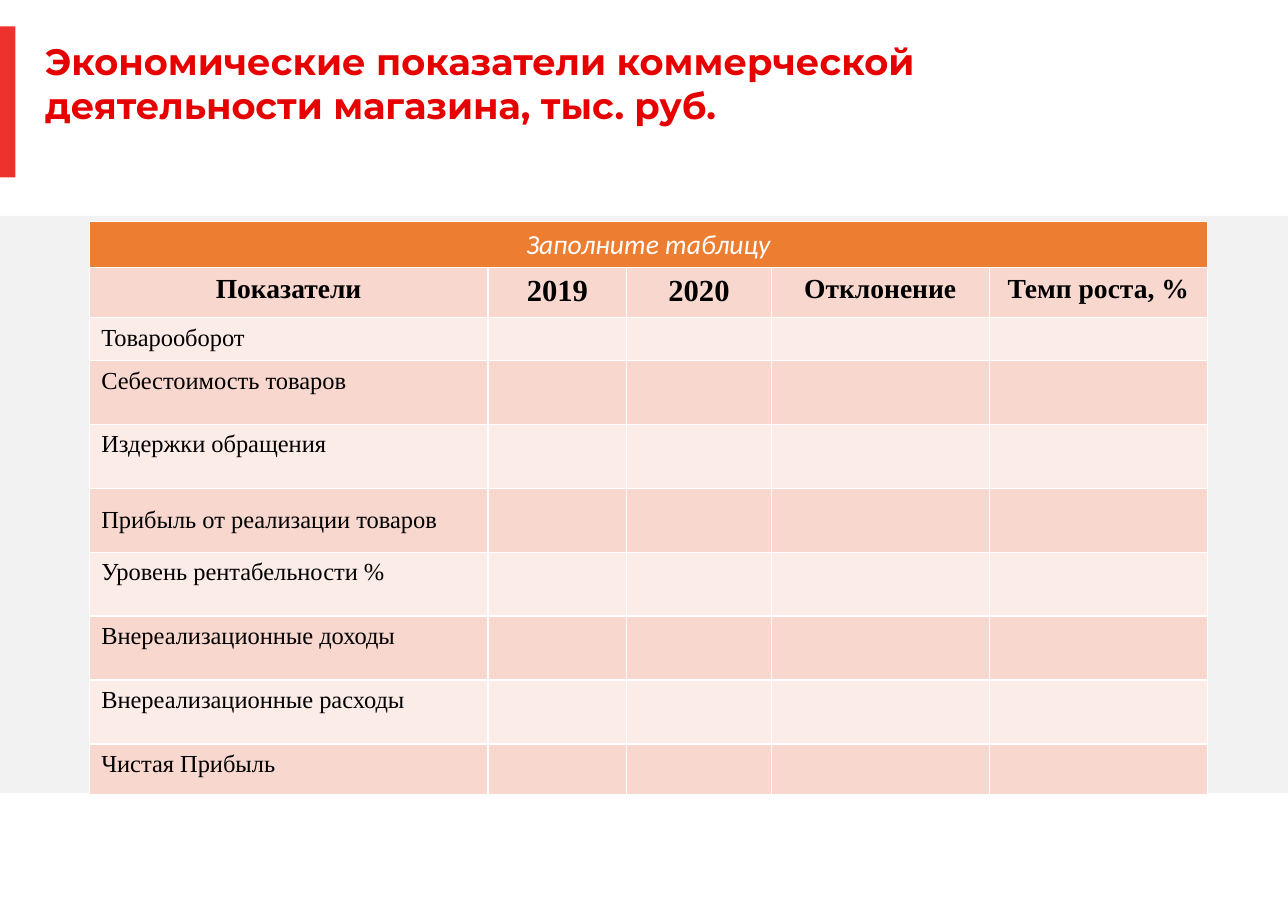
from lxml import etree
from pptx import Presentation
from pptx.dml.color import RGBColor
from pptx.enum.shapes import MSO_SHAPE
from pptx.enum.text import MSO_ANCHOR, PP_ALIGN
from pptx.oxml.ns import qn
from pptx.util import Pt

PX = 9144  # 100 px to the inch
RECTANGLE = MSO_SHAPE.RECTANGLE
TOP, MIDDLE = MSO_ANCHOR.TOP, MSO_ANCHOR.MIDDLE
CENTER, JUSTIFY = PP_ALIGN.CENTER, PP_ALIGN.JUSTIFY

SERIF = "Times New Roman"
WHITE, BLACK, RED = "FFFFFF", "000000", "E60000"
ORANGE, DARK_BAND, LIGHT_BAND = "ED7D31", "F8D7CE", "FCECE8"

COLUMN_WIDTHS = [362, 126, 131, 198, 198]
ROW_HEIGHTS = [41, 42, 39] + [58] * 6 + [46]
HEADINGS = [("Показатели", 18), ("2019", 20), ("2020", 20),
            ("Отклонение", 18), ("Темп роста, %", 18)]
INDICATORS = [
    "Товарооборот",
    "Себестоимость товаров",
    "Издержки обращения",
    "Прибыль от реализации товаров",
    "Уровень рентабельности %",
    "Внереализационные доходы",
    "Внереализационные расходы",
    "Чистая Прибыль",
]
CENTERED_INDICATOR = "Прибыль от реализации товаров"


def color(hex_string):
    return RGBColor.from_string(hex_string)


def px(*lengths):
    return [length * PX for length in lengths]


def add_bar(page, left, top, width, height, fill):
    bar = page.shapes.add_shape(RECTANGLE, *px(left, top, width, height))
    bar.shadow.inherit = False
    bar.fill.solid()
    bar.fill.fore_color.rgb = color(fill)
    bar.line.fill.background()


def write(frame, text, font, size, ink, bold=False, italic=False, align=None):
    frame.text = text
    para = frame.paragraphs[0]
    para.alignment = align
    span = para.runs[0]
    span.font.name = font
    span.font.size = Pt(size)
    span.font.bold = bold
    span.font.italic = italic
    span.font.color.rgb = color(ink)


def add_title(page, text):
    box = page.shapes.add_textbox(*px(41, 35, 999, 81))
    frame = box.text_frame
    frame.word_wrap = True
    frame.vertical_anchor = MIDDLE
    frame.margin_left = frame.margin_right = 0
    frame.margin_top = frame.margin_bottom = 0
    write(frame, text, "Montserrat", 24, RED, bold=True)


def style_cell(cell, fill):
    """Give the cell white one-point borders, a fill and its margins."""
    properties = cell._tc.get_or_add_tcPr()
    for side in ("a:lnL", "a:lnR", "a:lnT", "a:lnB"):
        line = etree.SubElement(properties, qn(side), w=str(Pt(1)))
        solid = etree.SubElement(line, qn("a:solidFill"))
        etree.SubElement(solid, qn("a:srgbClr"), val=WHITE)
    cell.fill.solid()
    cell.fill.fore_color.rgb = color(fill)
    cell.margin_left, cell.margin_right = px(11, 11)
    # Empty cells need no vertical margins, so they never stretch a row.
    cell.margin_top = cell.margin_bottom = 6 * PX if cell.text else 0


def add_indicator_table(page):
    frame = page.shapes.add_table(
        len(ROW_HEIGHTS), len(COLUMN_WIDTHS),
        *px(81, 201, sum(COLUMN_WIDTHS), sum(ROW_HEIGHTS)))
    table = frame.table
    for column, width in zip(table.columns, COLUMN_WIDTHS):
        column.width = width * PX
    for row, height in zip(table.rows, ROW_HEIGHTS):
        row.height = height * PX

    banner = table.cell(0, 0)
    banner.merge(table.cell(0, len(COLUMN_WIDTHS) - 1))
    write(banner.text_frame, "Заполните таблицу", "Calibri", 18, WHITE,
          italic=True, align=CENTER)
    for column, (heading, size) in enumerate(HEADINGS):
        write(table.cell(1, column).text_frame, heading, SERIF, size, BLACK,
              bold=True, align=CENTER)
    for row, indicator in enumerate(INDICATORS, start=2):
        cell = table.cell(row, 0)
        write(cell.text_frame, indicator, SERIF, 16, BLACK, align=JUSTIFY)
        cell.vertical_anchor = MIDDLE if indicator == CENTERED_INDICATOR else TOP

    for index, row in enumerate(table.rows):
        band = DARK_BAND if index % 2 else LIGHT_BAND
        for cell in row.cells:
            style_cell(cell, band if index else ORANGE)


def main():
    deck = Presentation()
    deck.slide_width, deck.slide_height = px(1169, 827)
    page = deck.slides.add_slide(deck.slide_layouts[6])
    add_bar(page, 0, 196, 1169, 524, "F2F2F2")
    add_bar(page, 0, 24, 14, 137, "EE312C")
    add_title(page, "Экономические показатели коммерческой "
                    "деятельности магазина, тыс. руб.")
    add_indicator_table(page)
    deck.save("out.pptx")


if __name__ == "__main__":
    main()
